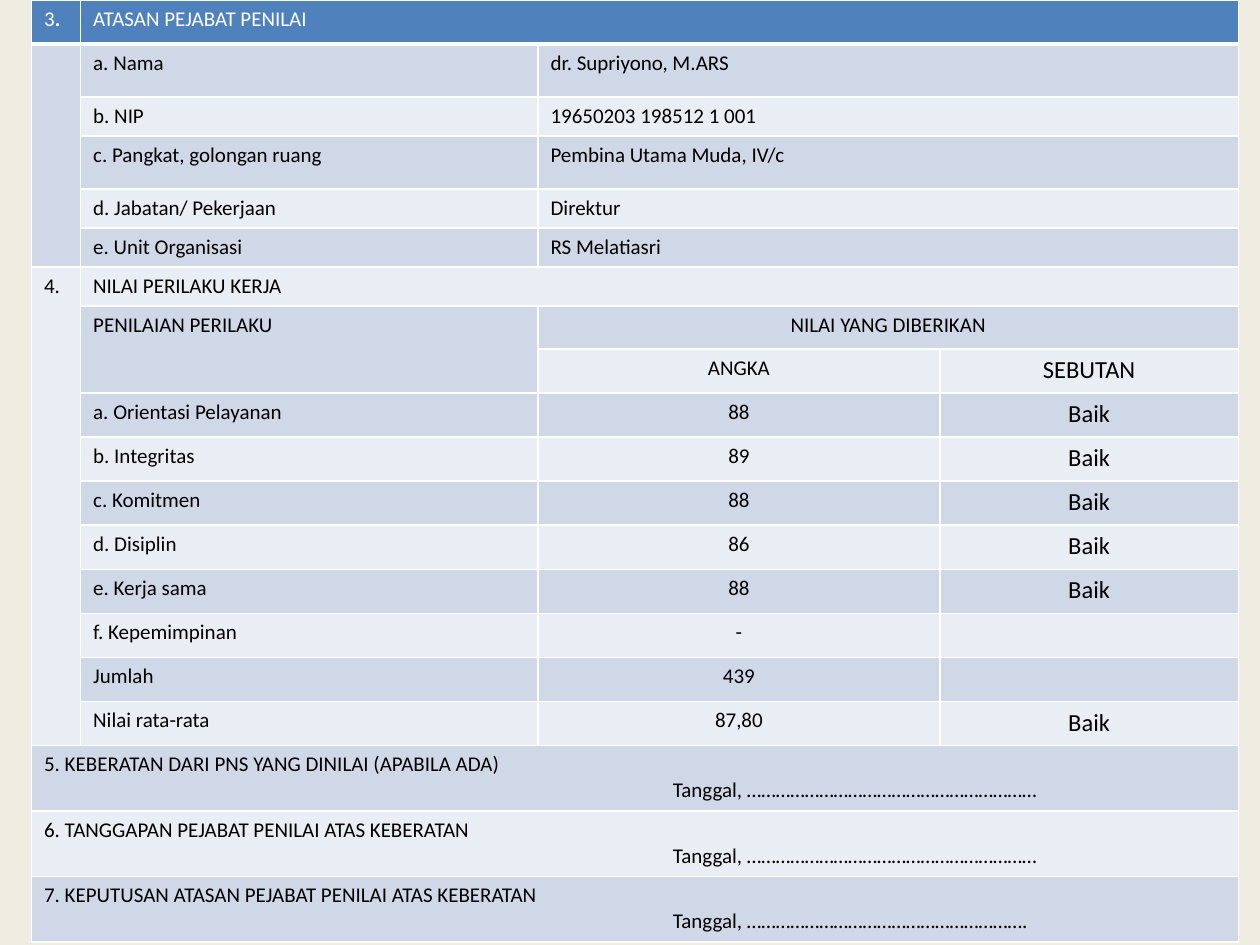
import dataclasses
import typing

import lxml.etree
import pptx
import pptx.dml.color
import pptx.enum.text
import pptx.oxml.ns
import pptx.util

Inches = pptx.util.Inches
qn = pptx.oxml.ns.qn
CENTER = pptx.enum.text.PP_ALIGN.CENTER


@dataclasses.dataclass(frozen=True)
class Theme:
    font: str = "Calibri"
    body: int = 12
    large: int = 14
    background: str = "EEECE1"
    header: str = "4F81BD"
    bands: tuple = ("E9EDF4", "D0D8E8")
    white: str = "FFFFFF"
    black: str = "000000"
    border: int = 1
    header_border: int = 3


@dataclasses.dataclass(frozen=True)
class Entry:
    row: int
    col: int
    text: str = ""
    rows: int = 1
    cols: int = 1
    centered: bool = False
    size: int = 12
    date: str = ""


THEME = Theme()
COLS = [0.39, 3.63, 3.19, 2.37]
ROWS = [0.35, 0.42, 0.31, 0.42] + [0.31] * 3 + [0.34] + [0.35] * 9 + [0.52] * 3
DATE_INDENT = Inches(4.99)

SUPERIOR = [
    ("a. Nama", "dr. Supriyono, M.ARS"),
    ("b. NIP", "19650203 198512 1 001"),
    ("c. Pangkat, golongan ruang", "Pembina Utama Muda, IV/c"),
    ("d. Jabatan/ Pekerjaan", "Direktur"),
    ("e. Unit Organisasi", "RS Melatiasri"),
]
SCORES = [
    ("a. Orientasi Pelayanan", "88", "Baik"),
    ("b. Integritas", "89", "Baik"),
    ("c. Komitmen", "88", "Baik"),
    ("d. Disiplin", "86", "Baik"),
    ("e. Kerja sama", "88", "Baik"),
    ("f. Kepemimpinan", "-", ""),
    ("Jumlah", "439", ""),
    ("Nilai rata-rata", "87,80", "Baik"),
]
OBJECTIONS = [
    ("5. KEBERATAN DARI PNS YANG DINILAI (APABILA ADA)",
     "Tanggal, ……………………………………………………"),
    ("6. TANGGAPAN PEJABAT PENILAI ATAS KEBERATAN",
     "Tanggal, ……………………………………………………"),
    ("7. KEPUTUSAN ATASAN PEJABAT PENILAI ATAS KEBERATAN",
     "Tanggal, …………………………………………………."),
]


def rgb(value: str) -> pptx.dml.color.RGBColor:
    return pptx.dml.color.RGBColor.from_string(value)


def form_entries() -> typing.Iterator[Entry]:
    # Section 3: the assessor's superior
    yield Entry(0, 0, "3")
    yield Entry(0, 1, "ATASAN PEJABAT PENILAI", cols=3)
    yield Entry(1, 0, rows=5)
    for row, (label, value) in enumerate(SUPERIOR, 1):
        yield Entry(row, 1, label)
        yield Entry(row, 2, value, cols=2)
    # Section 4: behaviour scores
    yield Entry(6, 0, "4.", rows=11)
    yield Entry(6, 1, "NILAI PERILAKU KERJA", cols=3)
    yield Entry(7, 1, "PENILAIAN PERILAKU", rows=2)
    yield Entry(7, 2, "NILAI YANG DIBERIKAN", cols=2, centered=True)
    yield Entry(8, 2, "ANGKA", centered=True)
    yield Entry(8, 3, "SEBUTAN", centered=True, size=THEME.large)
    for row, (label, score, grade) in enumerate(SCORES, 9):
        yield Entry(row, 1, label)
        yield Entry(row, 2, score, centered=True)
        yield Entry(row, 3, grade, centered=True, size=THEME.large)
    # Sections 5 to 7: objections and replies
    for row, (title, date) in enumerate(OBJECTIONS, 17):
        yield Entry(row, 0, title, cols=4, date=date)


def style_cell(cell: typing.Any, row: int) -> None:
    tcPr = cell._tc.get_or_add_tcPr()
    for side in ("L", "R", "T", "B"):
        heavy = (row, side) in ((0, "B"), (1, "T"))
        width = THEME.header_border if heavy else THEME.border
        ln = lxml.etree.SubElement(tcPr, qn(f"a:ln{side}"), w=str(pptx.util.Pt(width)))
        fill = lxml.etree.SubElement(ln, qn("a:solidFill"))
        lxml.etree.SubElement(fill, qn("a:srgbClr"), val=THEME.white)
    cell.fill.solid()
    cell.fill.fore_color.rgb = rgb(THEME.bands[row % 2] if row else THEME.header)
    # Keeps empty cells from stretching their row
    if not cell.text_frame.text:
        p = cell.text_frame.paragraphs[0]
        lxml.etree.SubElement(p._p, qn("a:endParaRPr"), sz=str(THEME.body * 100))


def add_run(p: typing.Any, text: str, size: int, color: str, bold: bool = False) -> None:
    r = p.add_run()
    r.text = text
    formats = {"name": THEME.font, "size": pptx.util.Pt(size), "bold": bold}
    for name, value in formats.items():
        setattr(r.font, name, value)
    r.font.color.rgb = rgb(color)


def write_entry(table: typing.Any, entry: Entry) -> None:
    cell = table.cell(entry.row, entry.col)
    if entry.rows > 1 or entry.cols > 1:
        cell.merge(table.cell(entry.row + entry.rows - 1, entry.col + entry.cols - 1))
    if not entry.text:
        return
    color = THEME.black if entry.row else THEME.white
    tf = cell.text_frame
    p = tf.paragraphs[0]
    if entry.centered:
        p.alignment = CENTER
    add_run(p, entry.text, entry.size, color)
    if entry.text == "3":
        add_run(p, ".", entry.size, color, bold=True)
    if entry.date:
        p = tf.add_paragraph()
        p._p.get_or_add_pPr().set("marL", str(DATE_INDENT))
        add_run(p, entry.date, entry.size, color)


def main() -> None:
    prs = pptx.Presentation()
    prs.slide_width, prs.slide_height = Inches(10), Inches(7.5)
    s = prs.slides.add_slide(prs.slide_layouts[6])
    s.background.fill.solid()
    s.background.fill.fore_color.rgb = rgb(THEME.background)

    # Assessment form
    table = s.shapes.add_table(len(ROWS), len(COLS), Inches(0.25), Inches(0),
                               Inches(9.58), Inches(7.5)).table
    for column, width in zip(table.columns, COLS):
        column.width = Inches(width)
    for row, height in zip(table.rows, ROWS):
        row.height = Inches(height)
    for entry in form_entries():
        write_entry(table, entry)
    for i in range(len(ROWS)):
        for j in range(len(COLS)):
            cell = table.cell(i, j)
            style_cell(cell, i)

    prs.save("out.pptx")


if __name__ == "__main__":
    main()
